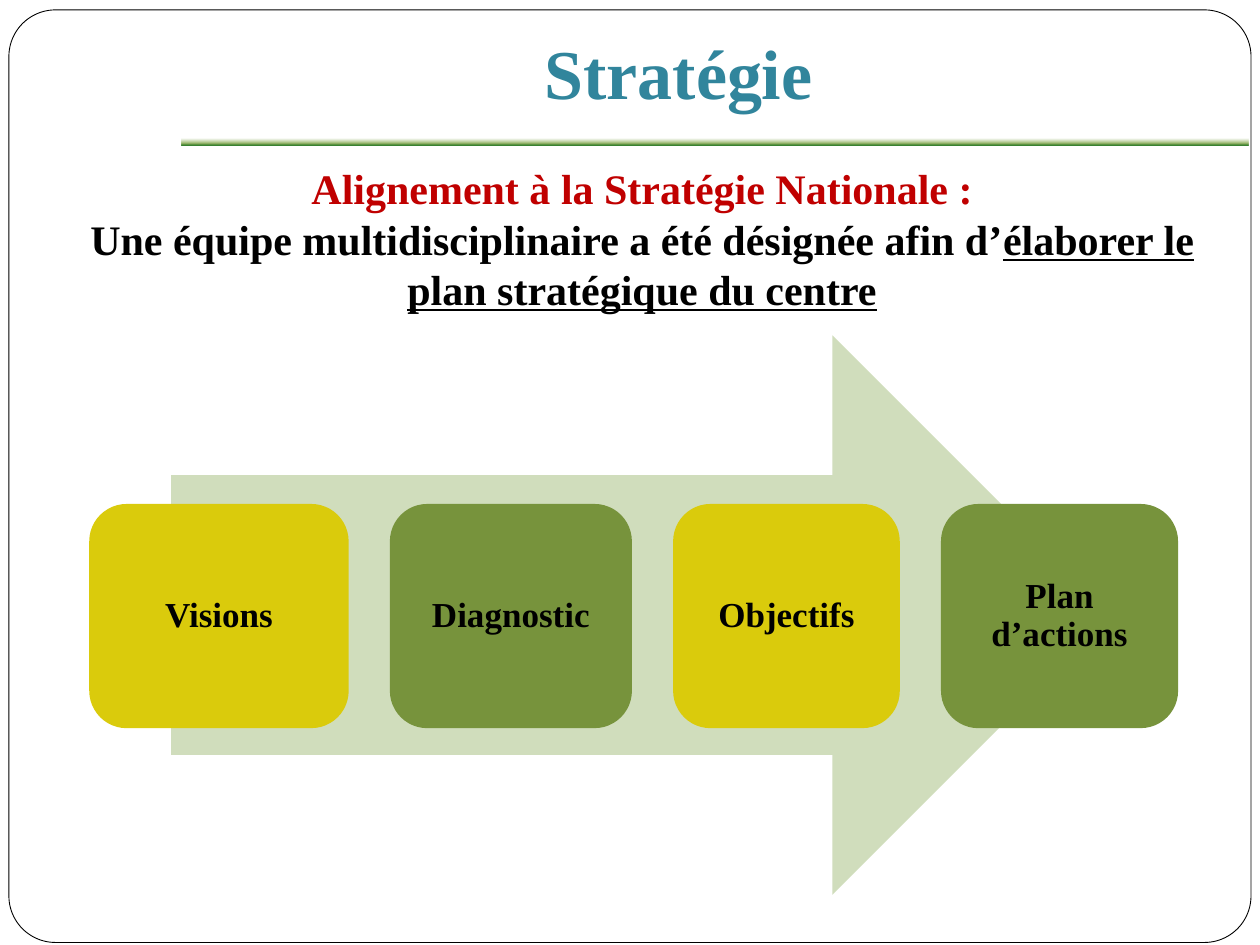
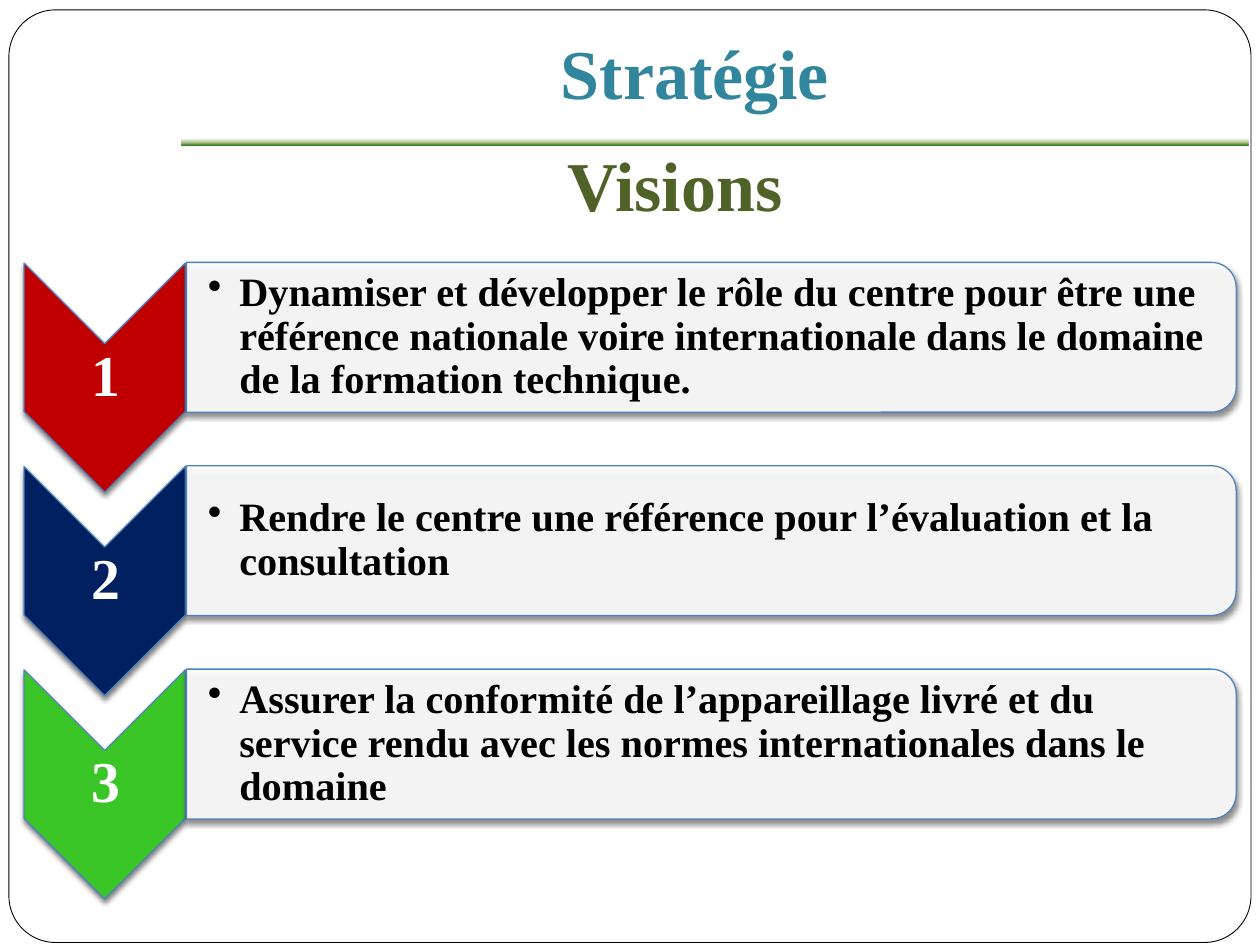
from dataclasses import dataclass

from lxml import etree
from pptx import Presentation
from pptx import util as u
from pptx.dml.color import RGBColor
from pptx.enum import shapes, text
from pptx.oxml import parse_xml
from pptx.oxml.ns import nsdecls, qn


@dataclass(frozen=True)
class Theme:
    font: str = "Times New Roman"
    title: str = "31859C"
    subtitle: str = "4F6228"
    accent: str = "C00000"
    navy: str = "002060"
    bright_green: str = "3BC628"
    yellow: str = "DACB0C"
    green: str = "77933C"
    pale_green: str = "D0DDBC"
    outline: str = "4F81BD"
    black: str = "000000"
    white: str = "FFFFFF"
    title_size: int = 40
    number_size: int = 33
    intro_size: int = 24
    body_size: int = 23
    step_size: int = 20


T = Theme()
SHAPE = shapes.MSO_SHAPE
CENTER = text.PP_ALIGN.CENTER
MIDDLE = text.MSO_ANCHOR.MIDDLE

RULE_FILL = f"""<a:gradFill {nsdecls('a')} rotWithShape="1"><a:gsLst>
<a:gs pos="0"><a:srgbClr val="FFFFFF"><a:alpha val="78000"/></a:srgbClr></a:gs>
<a:gs pos="65000"><a:srgbClr val="9CB86E"/></a:gs>
<a:gs pos="100000"><a:srgbClr val="156B13"/></a:gs>
</a:gsLst><a:lin ang="5400000" scaled="0"/></a:gradFill>"""
SHADOW = f"""<a:outerShdw {nsdecls('a')} blurRad="38100" dist="25400" dir="5400000"
rotWithShape="0"><a:srgbClr val="000000"><a:alpha val="50000"/></a:srgbClr></a:outerShdw>"""


def add_shape(s, kind, box, fill=None, line=None, width=0.75, shadow=False):
    sp = s.shapes.add_shape(kind, *map(u.Cm, box))
    sp.shadow.inherit = False
    if fill:
        sp.fill.solid()
        sp.fill.fore_color.rgb = RGBColor.from_string(fill)
    else:
        sp.fill.background()
    if line:
        sp.line.color.rgb = RGBColor.from_string(line)
        sp.line.width = u.Pt(width)
    else:
        sp.line.fill.background()
    if shadow:
        sp._element.spPr.find(qn("a:effectLst")).append(parse_xml(SHADOW))
    return sp


def write(sp, content, size, color, align=CENTER, anchor=MIDDLE,
          insets=(0.25, 0.13, 0.25, 0.13), spacing=None):
    tf = sp.text_frame
    tf.text = content
    tf.word_wrap = True
    tf.auto_size = text.MSO_AUTO_SIZE.NONE
    tf.vertical_anchor = anchor
    tf.margin_left, tf.margin_top, tf.margin_right, tf.margin_bottom = map(u.Cm, insets)
    for p in tf.paragraphs:
        p.alignment = align
        if spacing:
            p.line_spacing = spacing
        for r in p.runs:
            r.font.name = T.font
            r.font.size = u.Pt(size)
            r.font.bold = True
            r.font.color.rgb = RGBColor.from_string(color)
    return tf


prs = Presentation()
prs.slide_width, prs.slide_height = u.Cm(25.4), u.Cm(19.05)

# Shared frame, title and rule
for title_left in (3.76, 4.09):
    s = prs.slides.add_slide(prs.slide_layouts[5])
    frame = add_shape(s, SHAPE.ROUNDED_RECTANGLE, (0.18, 0.2, 25.04, 18.8),
                      line=T.black, width=0.5)
    frame.adjustments[0] = 0.05
    title = s.shapes.title
    title.left, title.top = u.Cm(title_left), u.Cm(0.33)
    title.width, title.height = u.Cm(19.84), u.Cm(2.36)
    write(title, "Stratégie", T.title_size, T.title, insets=(0.25, 0.13, 0.25, 0.25))
    rule = add_shape(s, SHAPE.RECTANGLE, (3.66, 2.8, 21.51, 0.14))
    no_fill = rule._element.spPr.find(qn("a:noFill"))
    no_fill.getparent().replace(no_fill, parse_xml(RULE_FILL))

strategy, visions = prs.slides

# Slide 1: introduction
intro = strategy.shapes.add_textbox(*map(u.Cm, (1.35, 3.15, 23.19, 4.37)))
tf = write(intro, "Alignement à la Stratégie Nationale :\n"
           "Une équipe multidisciplinaire a été désignée afin d’",
           T.intro_size, T.black, anchor=text.MSO_ANCHOR.TOP)
tf.paragraphs[0].runs[0].font.color.rgb = RGBColor.from_string(T.accent)
r = tf.paragraphs[1].add_run()
r.text = "élaborer le plan stratégique du centre"
r.font.name, r.font.size = T.font, u.Pt(T.intro_size)
r.font.bold = r.font.underline = True
r.font.color.rgb = RGBColor.from_string(T.black)

# Slide 1: steps on the arrow
add_shape(strategy, SHAPE.RIGHT_ARROW, (3.45, 6.76, 18.97, 11.28), T.pale_green)
steps = [
    ("Visions", 5.23, T.yellow),
    ("Diagnostic", 4.88, T.green),
    ("Objectifs", 4.57, T.yellow),
    ("Plan d’actions", 4.78, T.green),
]
left, gap = 1.8, 0.83
for label, width, color in steps:
    step = add_shape(strategy, SHAPE.ROUNDED_RECTANGLE, (left, 10.16, width, 4.52), color)
    write(step, label, T.step_size, T.black, insets=(0.3, 0.2, 0.3, 0.2), spacing=0.9)
    left += width + gap

# Slide 2: subtitle
subtitle = visions.shapes.add_textbox(*map(u.Cm, (1.3, 2.72, 24.61, 1.96)))
write(subtitle, "Visions", T.title_size, T.subtitle, anchor=text.MSO_ANCHOR.TOP)

# Slide 2: numbered chevrons with their panels
goals = [
    (T.accent, "Dynamiser et développer le rôle du centre pour être une référence nationale "
               "voire internationale dans le domaine de la formation technique."),
    (T.navy, "Rendre le centre une référence pour l’évaluation et la consultation"),
    (T.bright_green, "Assurer la conformité de l’appareillage livré et du service rendu "
                     "avec les normes internationales dans le domaine"),
]
pitch = 4.1
for i, (color, goal) in enumerate(goals):
    drop = i * pitch
    chevron = add_shape(visions, SHAPE.CHEVRON, (-0.2, 5.99 + drop, 4.62, 3.25),
                        color, T.outline, shadow=True)
    panel = add_shape(visions, SHAPE.ROUND_2_SAME_RECTANGLE,
                      (12.83, -3.78 + drop, 3.02, 21.16), T.white, T.outline, shadow=True)
    chevron.rotation = panel.rotation = 90
    white = panel._element.spPr.find(qn("a:solidFill"))[0]
    etree.SubElement(white, qn("a:alpha"), val="90000")

    number = visions.shapes.add_textbox(*map(u.Cm, (0.51, 6.91 + drop, 3.25, 1.4)))
    write(number, str(i + 1), T.number_size, T.white, insets=(0.05,) * 4, spacing=0.9)

    body = visions.shapes.add_textbox(*map(u.Cm, (3.73, 5.44 + drop, 21, 2.72)))
    tf = write(body, goal, T.body_size, T.black, align=text.PP_ALIGN.LEFT,
               insets=(0.46, 0.05, 0.05, 0.05), spacing=0.9)
    pPr = tf.paragraphs[0]._p.get_or_add_pPr()
    pPr.set("marL", "228600")
    pPr.set("indent", "-228600")
    etree.SubElement(pPr, qn("a:buChar"), char="•")

prs.save("out.pptx")
